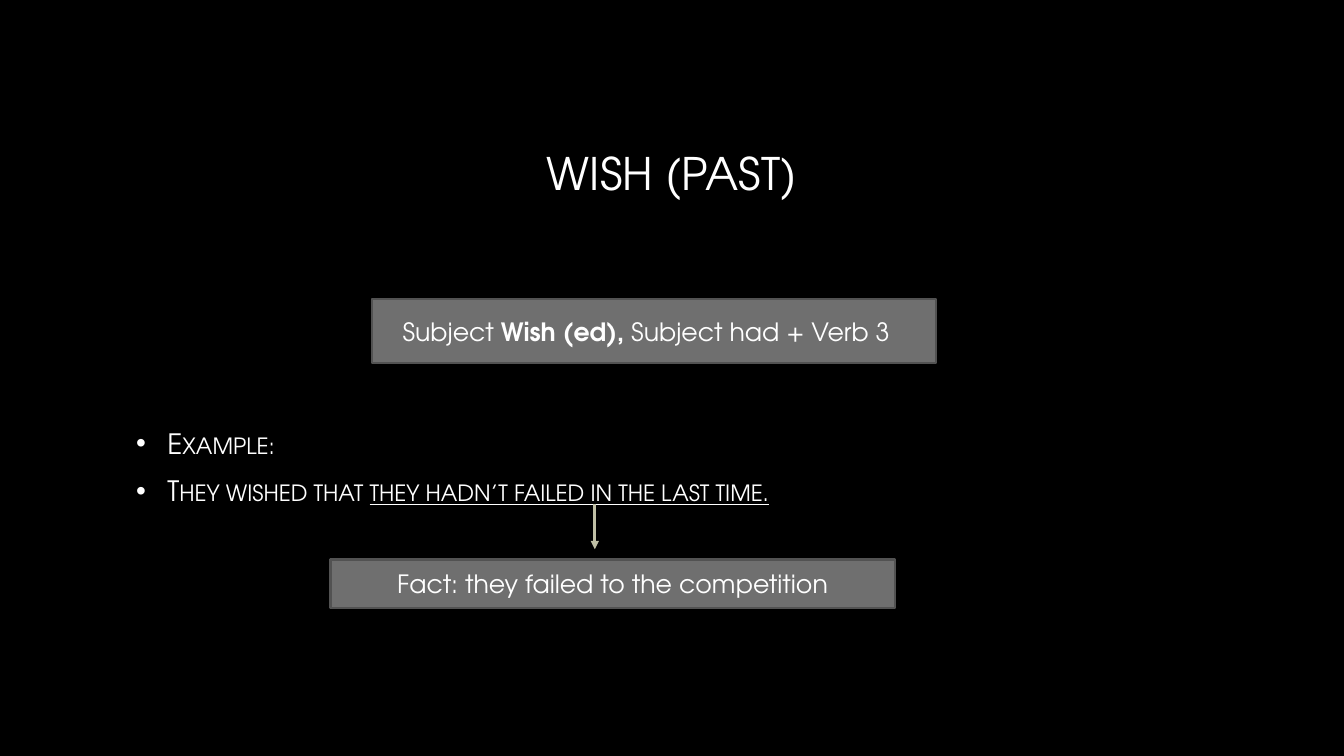
"""Build the slide explaining how "wish" is used for the past."""
from dataclasses import dataclass
from lxml.etree import SubElement
from pptx import Presentation
from pptx.dml.color import RGBColor
from pptx.enum.shapes import MSO_CONNECTOR, MSO_SHAPE
from pptx.enum.text import MSO_ANCHOR as Anchor, PP_ALIGN as Align
from pptx.oxml.ns import qn
from pptx.slide import Slide
from pptx.util import Cm, Pt

FONT = "TeX Gyre Adventor"
BLACK = RGBColor(0x00, 0x00, 0x00)
WHITE = RGBColor(0xFF, 0xFF, 0xFF)
GRAY = RGBColor(0x6F, 0x6F, 0x6F)
DARK_GRAY = RGBColor(0x52, 0x52, 0x52)
SAGE = RGBColor(0xBF, 0xBF, 0xA5)
MARGIN, CONTENT_WIDTH, PANEL_WIDTH = 3.18, 27.51, 14.22


@dataclass(frozen=True)
class Piece:
    text: str
    bold: bool = False
    underline: bool = False


@dataclass(frozen=True)
class Panel:
    left: float
    top: float
    height: float
    pieces: tuple[Piece, ...]
    right_inset: float = 0.25


FORMULA = Panel(9.37, 7.54, 1.6, (
    Piece("Subject "), Piece("Wish (ed), ", bold=True), Piece("Subject had + Verb 3")), 0.64)
FACT = Panel(8.33, 14.1, 1.22, (Piece("Fact: they failed to the competition"),))
EXAMPLES = (
    (Piece("Example:"),),
    (Piece("They wished that "), Piece("they hadn’t failed in the last time.", underline=True)),
)


def write(paragraph, pieces: tuple[Piece, ...], *, size: float,
          align: Align = Align.LEFT, small_caps: bool = False) -> None:
    """Write the pieces into a paragraph with one common format."""
    paragraph.alignment = align
    for piece in pieces:
        run = paragraph.add_run()
        run.text = piece.text
        font = run.font
        font.name, font.size, font.color.rgb = FONT, Pt(size), WHITE
        font.bold, font.underline = piece.bold, piece.underline
        if small_caps:
            run._r.get_or_add_rPr().set("cap", "small")


def add_bullet(paragraph) -> None:
    """Give a paragraph a white bullet with a hanging indent."""
    properties = paragraph._p.get_or_add_pPr()
    properties.set("marL", str(Cm(0.79)))
    properties.set("indent", str(-Cm(0.79)))
    color = SubElement(properties, qn("a:buClr"))
    SubElement(color, qn("a:srgbClr"), val=str(WHITE))
    SubElement(properties, qn("a:buFont"), typeface="Arial")
    SubElement(properties, qn("a:buChar"), char="•")


def add_title(slide: Slide, text: str) -> None:
    """Place and format the title placeholder."""
    title = slide.shapes.title
    title.left, title.top = Cm(MARGIN), Cm(1.7)
    title.width, title.height = Cm(CONTENT_WIDTH), Cm(5.28)
    title.text_frame.vertical_anchor = Anchor.MIDDLE
    write(title.text_frame.paragraphs[0], (Piece(text),), size=32, align=Align.CENTER)


def add_examples(slide: Slide) -> None:
    """Add the bulleted example sentences."""
    frame = slide.shapes.add_textbox(
        Cm(MARGIN), Cm(7.42), Cm(CONTENT_WIDTH), Cm(8.69)).text_frame
    frame.word_wrap = True
    frame.vertical_anchor = Anchor.MIDDLE
    for index, pieces in enumerate(EXAMPLES):
        paragraph = frame.add_paragraph() if index else frame.paragraphs[0]
        add_bullet(paragraph)
        paragraph.space_before = Pt(4 if index else 0)
        paragraph.space_after = Pt(6)
        write(paragraph, pieces, size=20, small_caps=True)


def add_panel(slide: Slide, panel: Panel) -> None:
    """Add a gray rectangle with a centred line of text."""
    box = slide.shapes.add_shape(MSO_SHAPE.RECTANGLE, Cm(panel.left), Cm(panel.top),
                                 Cm(PANEL_WIDTH), Cm(panel.height))
    box.shadow.inherit = False
    box.fill.solid()
    box.fill.fore_color.rgb = GRAY
    box.line.color.rgb, box.line.width = DARK_GRAY, Pt(1.5)
    frame = box.text_frame
    frame.word_wrap = True
    frame.vertical_anchor = Anchor.MIDDLE
    frame.margin_right = Cm(panel.right_inset)
    write(frame.paragraphs[0], panel.pieces, size=18, align=Align.CENTER)


def add_arrow(slide: Slide, x: float, top: float, bottom: float) -> None:
    """Add a downward arrow from the example to its fact."""
    arrow = slide.shapes.add_connector(
        MSO_CONNECTOR.STRAIGHT, Cm(x), Cm(top), Cm(x), Cm(bottom))
    arrow.line.color.rgb, arrow.line.width = SAGE, Pt(2)
    SubElement(arrow.line._get_or_add_ln(), qn("a:tailEnd"), type="triangle")
    SubElement(arrow._element.spPr, qn("a:effectLst"))


def main() -> None:
    """Build and save the presentation."""
    deck = Presentation()
    deck.slide_width, deck.slide_height = Cm(33.87), Cm(19.05)
    slide = deck.slides.add_slide(deck.slide_layouts[5])
    slide.background.fill.solid()
    slide.background.fill.fore_color.rgb = BLACK
    add_title(slide, "WISH (PAST)")
    add_examples(slide)
    for panel in (FORMULA, FACT):
        add_panel(slide, panel)
    add_arrow(slide, 14.99, 12.7, 13.84)
    deck.save("out.pptx")


if __name__ == "__main__":
    main()
